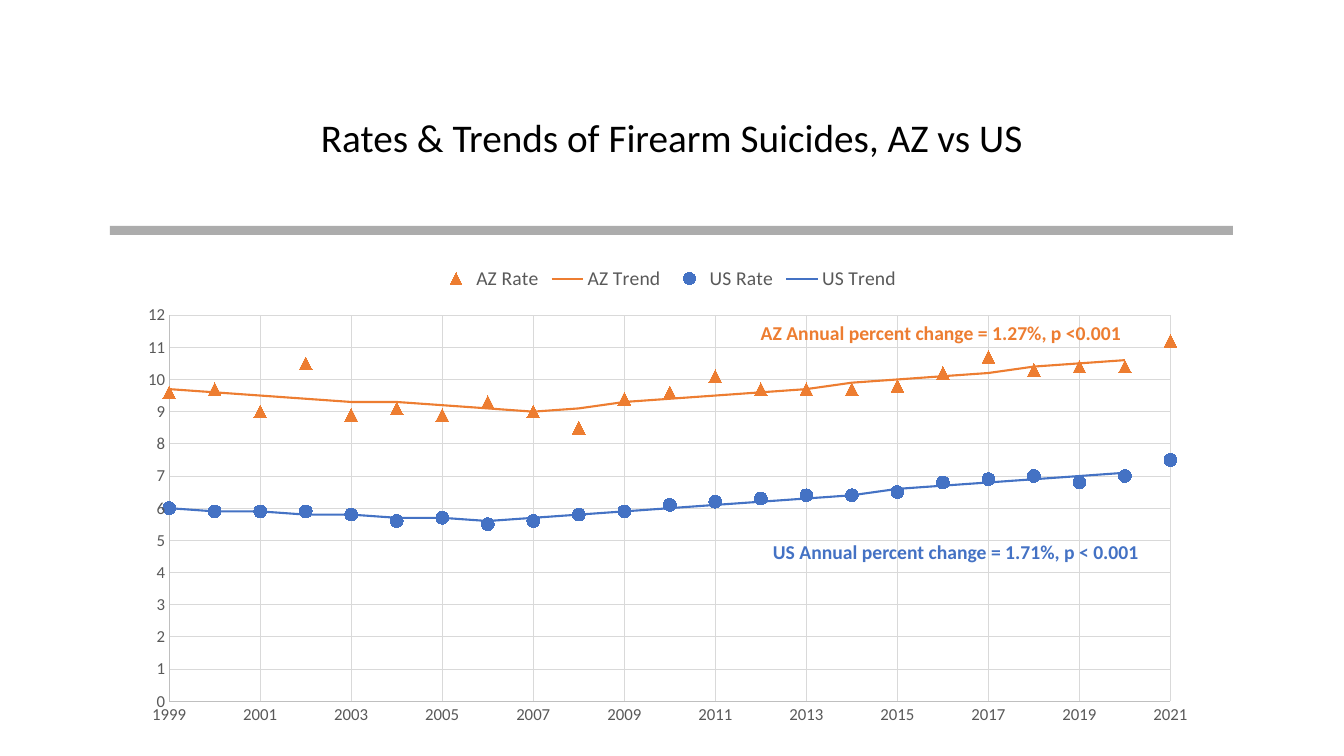
from lxml import etree
from pptx import Presentation
from pptx.chart.data import XyChartData
from pptx.dml.color import RGBColor
from pptx.enum.chart import XL_CHART_TYPE as Kind, XL_LEGEND_POSITION as Place
from pptx.enum.chart import XL_MARKER_STYLE as Mark, XL_TICK_MARK as Tick
from pptx.enum.shapes import MSO_SHAPE as Shape
from pptx.enum.text import MSO_ANCHOR as Anchor, MSO_AUTO_SIZE as Fit, PP_ALIGN as Align
from pptx.oxml.ns import qn
from pptx.util import Cm, Pt

BLACK = RGBColor(0x00, 0x00, 0x00)
GRAY = RGBColor(0x80, 0x80, 0x80)
DARK = RGBColor(0x59, 0x59, 0x59)
EDGE = RGBColor(0xBF, 0xBF, 0xBF)
GRID = RGBColor(0xD9, 0xD9, 0xD9)
ORANGE = RGBColor(0xED, 0x7D, 0x31)
BLUE = RGBColor(0x44, 0x72, 0xC4)
FACE = "Calibri"
START = 1999


def style(font, size, color, bold=False):
    font.name = FACE
    font.size = Pt(size)
    font.bold = bold
    font.color.rgb = color


def write(box, text, size, color, bold=False):
    frame = box.text_frame
    line = frame.paragraphs[0]
    line.text = text
    style(line.font, size, color, bold)
    return frame, line


deck = Presentation()
deck.slide_width, deck.slide_height = Cm(33.87), Cm(19.05)
slide = deck.slides.add_slide(deck.slide_layouts[6])
shapes = slide.shapes

title = shapes.add_textbox(Cm(2.41), Cm(1.68), Cm(29.03), Cm(3.68))
frame, line = write(title, "Rates & Trends of Firearm Suicides, AZ vs US", 28, BLACK)
frame.word_wrap = True
frame.vertical_anchor = Anchor.MIDDLE
line.alignment = Align.CENTER
line.line_spacing = 0.9

bar = shapes.add_shape(Shape.RECTANGLE, Cm(2.77), Cm(5.69), Cm(28.3), Cm(0.23))
bar.shadow.inherit = False
bar.fill.solid()
bar.fill.fore_color.rgb = GRAY
bar.line.fill.background()
tint = bar.fill._xPr.find(qn("a:solidFill"))[0]
etree.SubElement(tint, qn("a:alpha")).set("val", "65000")

rows = [
    ("AZ Rate", ORANGE, Mark.TRIANGLE,
     [9.6, 9.7, 9, 10.5, 8.9, 9.1, 8.9, 9.3, 9, 8.5, 9.4, 9.6,
      10.1, 9.7, 9.7, 9.7, 9.8, 10.2, 10.7, 10.3, 10.4, 10.4, 11.2]),
    ("AZ Trend", ORANGE, None,
     [9.7, 9.6, 9.5, 9.4, 9.3, 9.3, 9.2, 9.1, 9, 9.1, 9.3,
      9.4, 9.5, 9.6, 9.7, 9.9, 10, 10.1, 10.2, 10.4, 10.5, 10.6]),
    ("US Rate", BLUE, Mark.CIRCLE,
     [6, 5.9, 5.9, 5.9, 5.8, 5.6, 5.7, 5.5, 5.6, 5.8, 5.9, 6.1,
      6.2, 6.3, 6.4, 6.4, 6.5, 6.8, 6.9, 7, 6.8, 7, 7.5]),
    ("US Trend", BLUE, None,
     [6, 5.9, 5.9, 5.8, 5.8, 5.7, 5.7, 5.6, 5.7, 5.8, 5.9,
      6, 6.1, 6.2, 6.3, 6.4, 6.6, 6.7, 6.8, 6.9, 7, 7.1]),
]
data = XyChartData()
for name, color, mark, rates in rows:
    item = data.add_series(name)
    for year, rate in enumerate(rates, START):
        item.add_data_point(year, rate)

chart = shapes.add_chart(Kind.XY_SCATTER, Cm(3.2), Cm(6.43), Cm(27.28), Cm(12.09), data).chart
style(chart.font, 10, BLACK)
chart.has_title = False
chart.has_legend = True
chart.legend.position = Place.TOP
chart.legend.include_in_layout = False
style(chart.legend.font, 14, DARK)
plot = chart.plots[0]
plot.vary_by_categories = False

for item, (name, color, mark, rates) in zip(plot.series, rows):
    item.smooth = False
    if mark is None:
        item.marker.style = Mark.NONE
        item.format.line.color.rgb = color
        item.format.line.width = Pt(1.5)
    else:
        item.format.line.fill.background()
        item.marker.style = mark
        item.marker.size = 9
        item.marker.format.fill.solid()
        item.marker.format.fill.fore_color.rgb = color
        item.marker.format.line.color.rgb = color

axes = [(chart.category_axis, START, 2021, 2), (chart.value_axis, 0, 12, 1)]
for axis, low, high, step in axes:
    axis.minimum_scale, axis.maximum_scale, axis.major_unit = low, high, step
    axis.major_tick_mark = axis.minor_tick_mark = Tick.NONE
    axis.has_major_gridlines = True
    style(axis.tick_labels.font, 12, DARK)
    for rule, color in ((axis.format.line, EDGE), (axis.major_gridlines.format.line, GRID)):
        rule.color.rgb = color
        rule.width = Pt(0.75)

area = chart._chartSpace.find(".//" + qn("c:plotArea"))
for old in area.findall(qn("c:layout")):
    area.remove(old)
layout = etree.Element(qn("c:layout"))
area.insert(0, layout)
inner = etree.SubElement(layout, qn("c:manualLayout"))
for tag, val in [("layoutTarget", "inner"), ("xMode", "edge"), ("yMode", "edge"),
                 ("x", "0.039"), ("y", "0.125"), ("w", "0.925"), ("h", "0.805")]:
    etree.SubElement(inner, qn("c:" + tag)).set("val", val)

notes = [
    ("AZ Annual percent change = 1.27%, p <0.001", ORANGE, 18.92, 7.95, 9.65),
    ("US Annual percent change = 1.71%, p < 0.001", BLUE, 19.23, 13.49, 9.8),
]
for text, color, left, top, width in notes:
    note = shapes.add_textbox(Cm(left), Cm(top), Cm(width), Cm(0.86))
    frame, line = write(note, text, 14, color, True)
    frame.word_wrap = False
    frame.auto_size = Fit.SHAPE_TO_FIT_TEXT

deck.save("out.pptx")
